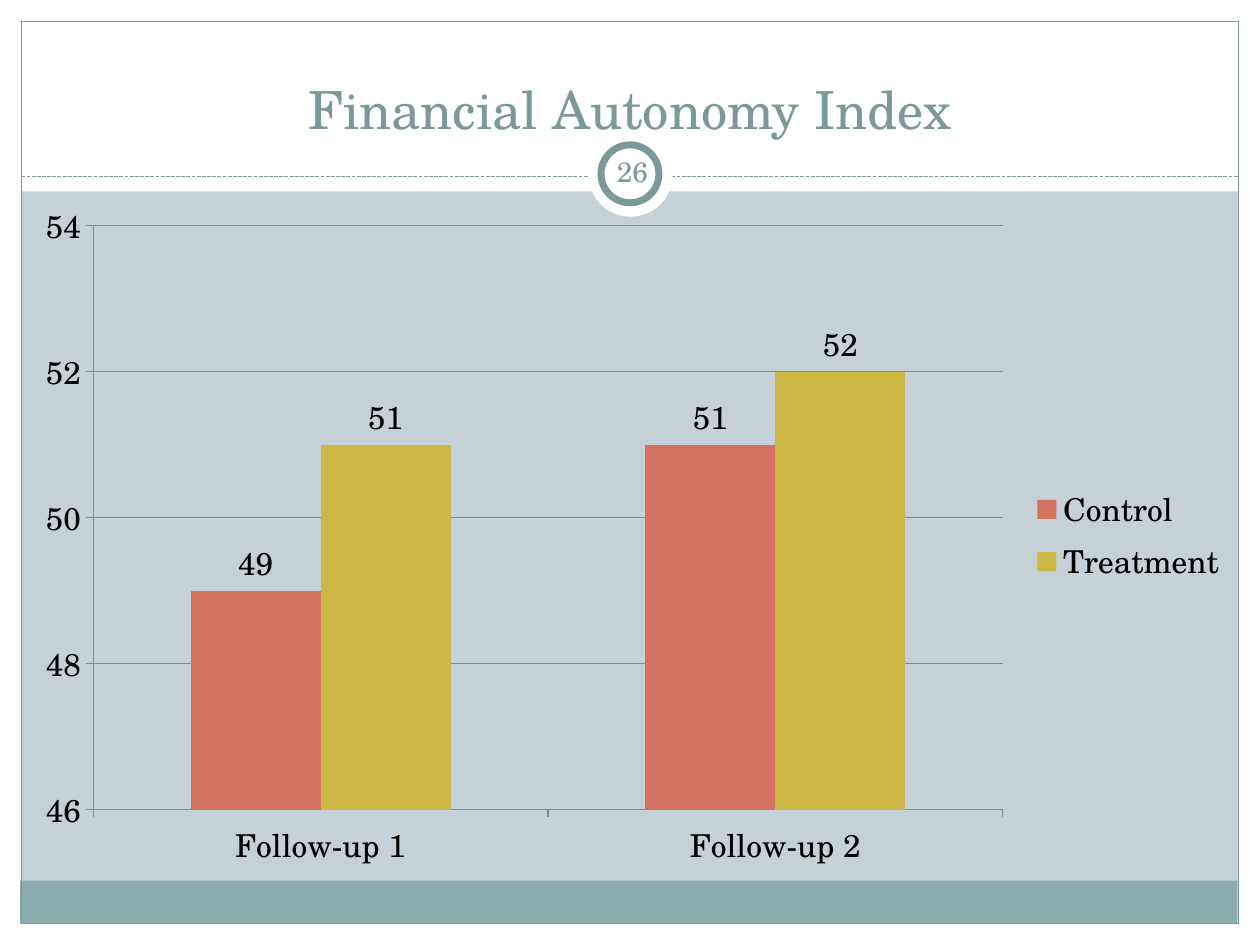
from dataclasses import dataclass
from typing import Optional

import pptx
import pptx.chart.data
import pptx.dml.color
import pptx.enum.chart
import pptx.enum.dml
import pptx.enum.shapes
import pptx.enum.text
import pptx.oxml
import pptx.oxml.ns
import pptx.util
from lxml import etree

RGB = pptx.dml.color.RGBColor
MSO = pptx.enum.shapes.MSO_SHAPE
ANCHOR = pptx.enum.text.MSO_ANCHOR
qn = pptx.oxml.ns.qn

PX = 9144  # 100 px to the inch
FONT = "TeX Gyre Schola"
WHITE = RGB(0xFF, 0xFF, 0xFF)
BLACK = RGB(0, 0, 0)
BACKGROUND = RGB(0xC5, 0xD1, 0xD7)
TEAL = RGB(0x7C, 0x99, 0x9A)
FOOTER = RGB(0x8C, 0xAD, 0xAE)
AXIS = RGB(0x87, 0x87, 0x87)
CONTROL = RGB(0xD1, 0x63, 0x49)
TREATMENT = RGB(0xCC, 0xB4, 0x00)


@dataclass(frozen=True)
class Panel:
    left: int
    top: int
    width: int
    height: int
    fill: Optional[RGB] = WHITE
    line: Optional[RGB] = None
    weight: float = 0.75
    kind: MSO = MSO.RECTANGLE


@dataclass(frozen=True)
class Group:
    name: str
    values: tuple[int, ...]
    color: RGB


PANELS = [
    Panel(0, 733, 1000, 17),
    Panel(0, 0, 1000, 152),
    Panel(0, 0, 17, 750),
    Panel(983, 0, 17, 750),
    Panel(16, 699, 966, 34, fill=FOOTER),
    Panel(17, 17, 966, 716, fill=None, line=TEAL),
]
BADGE = [
    Panel(467, 105, 67, 67, kind=MSO.OVAL),
    Panel(477, 115, 46, 46, line=TEAL, weight=4, kind=MSO.OVAL),
]
CATEGORIES = ("Follow-up 1", "Follow-up 2")
GROUPS = [
    Group("Control", (49, 51), CONTROL),
    Group("Treatment", (51, 52), TREATMENT),
]


def emu(*lengths: int) -> list[pptx.util.Emu]:
    return [pptx.util.Emu(n * PX) for n in lengths]


def add_panel(s, panel: Panel) -> None:
    sp = s.shapes.add_shape(
        panel.kind, *emu(panel.left, panel.top, panel.width, panel.height))
    sp.shadow.inherit = False
    if panel.fill is None:
        sp.fill.background()
    else:
        sp.fill.solid()
        sp.fill.fore_color.rgb = panel.fill
    if panel.line is None:
        sp.line.fill.background()
    else:
        sp.line.color.rgb = panel.line
        sp.line.width = pptx.util.Pt(panel.weight)


def add_divider(s, left: int, right: int, y: int) -> None:
    line = s.shapes.add_connector(
        pptx.enum.shapes.MSO_CONNECTOR.STRAIGHT, *emu(left, y, right, y))
    line.line.color.rgb = TEAL
    line.line.width = pptx.util.Pt(0.75)
    line.line.dash_style = pptx.enum.dml.MSO_LINE.SQUARE_DOT
    etree.SubElement(line._element.spPr, qn("a:effectLst"))


def add_text(s, text: str, box: tuple[int, int, int, int], *, size: int,
             anchor: ANCHOR, inset: tuple[int, int] = (10, 5),
             color: RGB = TEAL) -> None:
    tf = s.shapes.add_textbox(*emu(*box)).text_frame
    tf.word_wrap = True
    tf.vertical_anchor = anchor
    tf.margin_left = tf.margin_right = inset[0] * PX
    tf.margin_top = tf.margin_bottom = inset[1] * PX
    p = tf.paragraphs[0]
    p.alignment = pptx.enum.text.PP_ALIGN.CENTER
    r = p.add_run()
    r.text = text
    r.font.name = FONT
    r.font.size = pptx.util.Pt(size)
    r.font.color.rgb = color


def style_line(line) -> None:
    line.color.rgb = AXIS
    line.width = pptx.util.Pt(0.75)


def style_series(series, color: RGB) -> None:
    """Fill the bars with a slight tint and put whole values above them."""
    series.format.fill.solid()
    series.format.fill.fore_color.rgb = color
    for clr in series._element.spPr.iter(qn("a:srgbClr")):
        etree.SubElement(clr, qn("a:tint"), val="95000")
    series.invert_if_negative = False
    labels = series.data_labels
    labels.show_value = True
    labels.number_format = "0"
    labels.number_format_is_linked = False
    labels.position = pptx.enum.chart.XL_LABEL_POSITION.OUTSIDE_END


def add_index_chart(s, box: tuple[int, int, int, int]) -> None:
    data = pptx.chart.data.CategoryChartData()
    data.categories = CATEGORIES
    for group in GROUPS:
        data.add_series(group.name, group.values)
    chart = s.shapes.add_chart(
        pptx.enum.chart.XL_CHART_TYPE.COLUMN_CLUSTERED, *emu(*box), data).chart
    chart.has_title = False
    chart.font.name = FONT
    chart.font.size = pptx.util.Pt(18)
    chart.font.color.rgb = BLACK
    chart.has_legend = True
    chart.legend.position = pptx.enum.chart.XL_LEGEND_POSITION.RIGHT
    chart.legend.include_in_layout = False

    plot = chart.plots[0]
    plot.gap_width = 150
    plot.overlap = 0
    plot.vary_by_categories = False
    for series, group in zip(plot.series, GROUPS):
        style_series(series, group.color)

    for axis in (chart.category_axis, chart.value_axis):
        axis.major_tick_mark = pptx.enum.chart.XL_TICK_MARK.OUTSIDE
        style_line(axis.format.line)
    values = chart.value_axis
    values.minimum_scale, values.maximum_scale, values.major_unit = 46, 54, 2
    values.has_major_gridlines = True
    style_line(values.major_gridlines.format.line)
    values.tick_labels.number_format = "#,##0"
    values.tick_labels.number_format_is_linked = False


def main() -> None:
    prs = pptx.Presentation()
    prs.slide_width, prs.slide_height = emu(1000, 750)
    s = prs.slides.add_slide(prs.slide_layouts[6])
    s.background.fill.solid()
    s.background.fill.fore_color.rgb = BACKGROUND

    for panel in PANELS:
        add_panel(s, panel)
    add_divider(s, 17, 983, 140)
    for ring in BADGE:
        add_panel(s, ring)
    add_text(s, "Financial Autonomy Index", (0, 33, 1000, 83),
             size=30, anchor=ANCHOR.BOTTOM)
    add_text(s, "26", (477, 112, 50, 48),
             size=16, anchor=ANCHOR.MIDDLE, inset=(5, 5))
    add_index_chart(s, (17, 150, 967, 550))
    prs.save("out.pptx")


if __name__ == "__main__":
    main()
